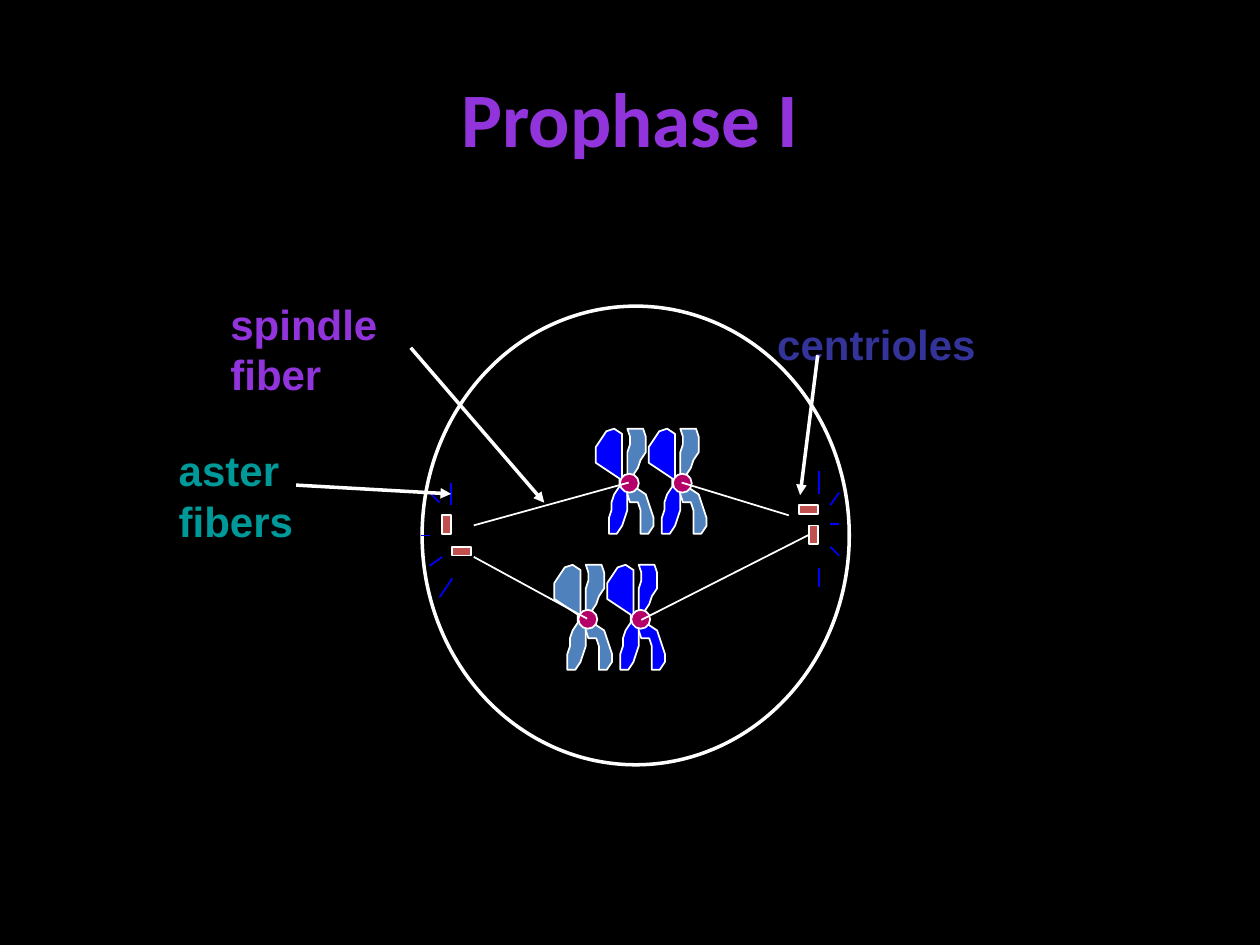
"""Build the Prophase I slide: a cell with paired chromosomes, spindle and labels."""
from lxml.etree import SubElement
from pptx import Presentation
from pptx.dml.color import RGBColor
from pptx.enum.shapes import MSO_CONNECTOR, MSO_SHAPE as SHAPE
from pptx.enum.text import MSO_ANCHOR as ANCHOR, MSO_AUTO_SIZE as FIT, PP_ALIGN as ALIGN
from pptx.oxml.ns import qn
from pptx.util import Inches, Pt

BLACK = RGBColor(0x00, 0x00, 0x00)
WHITE = RGBColor(0xFF, 0xFF, 0xFF)
BLUE = RGBColor(0x00, 0x00, 0xFF)
STEEL = RGBColor(0x4F, 0x81, 0xBD)
RED = RGBColor(0xC0, 0x50, 0x4D)
MAGENTA = RGBColor(0xB5, 0x00, 0x69)
PURPLE = RGBColor(0x92, 0x34, 0xDB)
INDIGO = RGBColor(0x33, 0x33, 0x99)
TEAL = RGBColor(0x00, 0x99, 0x99)


def paint(shape, fill, weight=1):
    shape.shadow.inherit = False
    shape.fill.solid()
    shape.fill.fore_color.rgb = fill
    shape.line.color.rgb = WHITE
    shape.line.width = Pt(weight)
    return shape


def draw_line(start, end, color, weight=1, arrow=False):
    line = page.shapes.add_connector(
        MSO_CONNECTOR.STRAIGHT, *[Inches(value) for value in start + end])
    line.line.color.rgb = color
    line.line.width = Pt(weight)
    if arrow:
        SubElement(line.line._get_or_add_ln(), qn("a:tailEnd"), type="triangle")
    SubElement(line._element.spPr, qn("a:effectLst"))
    return line


deck = Presentation()
deck.slide_width, deck.slide_height = Inches(10), Inches(7.5)
page = deck.slides.add_slide(deck.slide_layouts[6])
page.background.fill.solid()
page.background.fill.fore_color.rgb = BLACK

cell = page.shapes.add_shape(
    SHAPE.OVAL, Inches(3.35), Inches(2.43), Inches(3.39), Inches(3.64))
paint(cell, BLACK, 2)

centrioles = []
for left, top, width, height in [
    (3.51, 4.09, 0.07, 0.15),
    (3.59, 4.34, 0.15, 0.07),
    (6.34, 4.01, 0.15, 0.07),
    (6.42, 4.17, 0.07, 0.15),
]:
    box = page.shapes.add_shape(
        SHAPE.RECTANGLE, Inches(left), Inches(top), Inches(width), Inches(height))
    centrioles.append(paint(box, RED))

LEFT_CHROMATID = [
    (0, 0), (-3, -1), (-3, -19), (-6, -21), (-9, -20), (-13, -14), (-13, -8),
    (-4, -2), (-4, 1), (-6, 4), (-7, 7), (-7, 10), (-8, 13), (-8, 19),
    (-5, 19), (-3, 16), (-1, 10), (-1, 1),
]
RIGHT_CHROMATID = [
    (0, 0), (-1, -3), (-1, -12), (0, -15), (0, -18), (-1, -21), (5, -21),
    (6, -18), (6, -12), (4, -9), (3, -6), (1, -3), (0, 0), (6, 4), (9, 13),
    (9, 16), (7, 19), (4, 19), (4, 10), (3, 7), (0, 7), (-1, 4), (-1, 1),
]
for x, y, left_fill, right_fill in [
    (4.67, 4.92, STEEL, STEEL),
    (5.42, 3.84, BLUE, STEEL),
    (5, 3.84, BLUE, STEEL),
    (5.09, 4.92, BLUE, BLUE),
]:
    for outline, fill in [(LEFT_CHROMATID, left_fill), (RIGHT_CHROMATID, right_fill)]:
        builder = page.shapes.build_freeform(*outline[0], scale=Inches(1) / 48)
        builder.add_line_segments(outline[1:], close=True)
        paint(builder.convert_to_shape(Inches(x), Inches(y)), fill)
    centromere = page.shapes.add_shape(
        SHAPE.OVAL, Inches(x - 0.08), Inches(y - 0.08), Inches(0.15), Inches(0.15))
    paint(centromere, MAGENTA)

TITLE = {"name": "Calibri", "size": Pt(44), "bold": True}
LABEL = {"name": "Arial", "size": Pt(24), "bold": True}
for lines, place, color, font, frame_format, align in [
    (["Prophase I"], (0.5, 0.3, 9, 1.25), PURPLE, TITLE,
     {"word_wrap": True, "vertical_anchor": ANCHOR.MIDDLE}, ALIGN.CENTER),
    (["centrioles"], (6.07, 2.48, 1.82, 0.5), INDIGO, LABEL,
     {"word_wrap": False, "auto_size": FIT.SHAPE_TO_FIT_TEXT}, ALIGN.LEFT),
    (["spindle fiber"], (1.73, 2.32, 2.15, 0.5), PURPLE, LABEL,
     {"word_wrap": True, "auto_size": FIT.SHAPE_TO_FIT_TEXT}, ALIGN.LEFT),
    (["aster", "fibers"], (1.32, 3.48, 1.11, 0.9), TEAL, LABEL,
     {"word_wrap": False, "auto_size": FIT.SHAPE_TO_FIT_TEXT}, ALIGN.LEFT),
]:
    frame = page.shapes.add_textbox(*[Inches(value) for value in place]).text_frame
    for name, value in frame_format.items():
        setattr(frame, name, value)
    for index, words in enumerate(lines):
        para = frame.add_paragraph() if index else frame.paragraphs[0]
        para.alignment = align
        span = para.add_run()
        span.text = words
        for name, value in font.items():
            setattr(span.font, name, value)
        span.font.color.rgb = color

for start, end in [
    ((3.59, 4.59), (3.49, 4.74)),
    ((3.51, 4.42), (3.41, 4.49)),
    ((3.34, 4.25), (3.41, 4.25)),
    ((3.42, 3.92), (3.49, 3.99)),
    ((3.58, 4.01), (3.58, 3.83)),
    ((6.5, 3.92), (6.5, 3.74)),
    ((6.59, 4.01), (6.66, 3.91)),
    ((6.59, 4.16), (6.66, 4.16)),
    ((6.59, 4.34), (6.66, 4.41)),
    ((6.5, 4.51), (6.5, 4.66)),
]:
    draw_line(start, end, BLUE)

for start, end in [
    ((3.76, 4.17), (4.99, 3.83)),
    ((6.26, 4.09), (5.41, 3.83)),
    ((3.76, 4.42), (4.66, 4.91)),
]:
    draw_line(start, end, WHITE)
draw_line((5.09, 4.92), (6.42, 4.24), WHITE).end_connect(centrioles[3], 1)

for start, end in [
    ((2.35, 3.85), (3.58, 3.92)),
    ((3.26, 2.76), (4.32, 3.99)),
    ((6.49, 2.82), (6.35, 3.93)),
]:
    draw_line(start, end, WHITE, 2, arrow=True)

deck.save("out.pptx")
